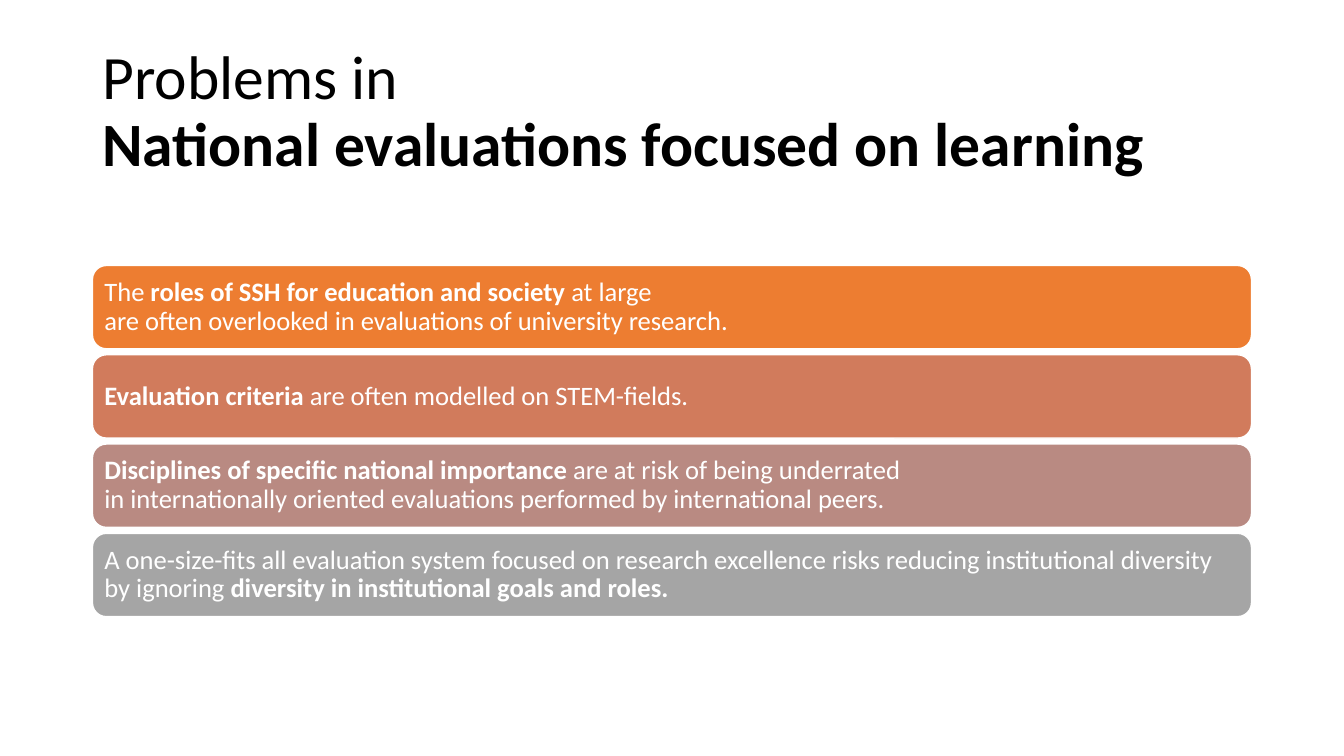
import pptx
import pptx.dml.color
import pptx.enum.shapes
import pptx.enum.text
import pptx.util

Cm = pptx.util.Cm
Pt = pptx.util.Pt

COLORS = {
    "text": "000000",
    "white": "FFFFFF",
    "roles": "ED7D31",
    "criteria": "D17B5C",
    "disciplines": "B98A82",
    "diversity": "A5A5A5",
}

LEFT, WIDTH = 2.33, 29.21
BAR_TOP, BAR_HEIGHT, BAR_PITCH = 6.69, 2.1, 2.25

# Each run is (text, bold); each inner list is one line.
TITLE = [
    [("Problems in ", False)],
    [("National evaluations focused on learning", True)],
]
PROBLEMS = [
    ("roles", [
        [("The ", False), ("roles of SSH for education and society ", True),
         ("at large ", False)],
        [("are often overlooked in evaluations of university research.", False)],
    ]),
    ("criteria", [
        [("Evaluation criteria ", True),
         ("are often modelled on STEM-fields.", False)],
    ]),
    ("disciplines", [
        [("Disciplines of specific national importance ", True),
         ("are at risk of being underrated ", False)],
        [("in internationally oriented evaluations performed by "
          "international peers.", False)],
    ]),
    ("diversity", [
        [("A one-size-fits all evaluation system focused on research excellence "
          "risks reducing institutional diversity ", False)],
        [("by ignoring ", False),
         ("diversity in institutional goals and roles.", True)],
    ]),
]


def rgb(name):
    return pptx.dml.color.RGBColor.from_string(COLORS[name])


def set_attrs(obj, values):
    for name, value in values.items():
        setattr(obj, name, value)


def write_lines(tf, lines, size, color, inset):
    """Fill a text frame with one paragraph of broken lines."""
    set_attrs(tf, {
        "word_wrap": True,
        "vertical_anchor": pptx.enum.text.MSO_ANCHOR.MIDDLE,
        "margin_left": inset, "margin_right": inset,
        "margin_top": inset, "margin_bottom": inset,
    })
    p = tf.paragraphs[0]
    set_attrs(p, {"alignment": pptx.enum.text.PP_ALIGN.LEFT, "line_spacing": 0.9})
    for i, line in enumerate(lines):
        if i:
            p.add_line_break()
        for text, bold in line:
            r = p.add_run()
            r.text = text
            set_attrs(r.font, {"name": "Calibri", "size": Pt(size), "bold": bold})
            r.font.color.rgb = rgb(color)


def add_title(s):
    sp = s.shapes.add_textbox(Cm(LEFT), Cm(1.01), Cm(WIDTH), Cm(3.68))
    write_lines(sp.text_frame, TITLE, 44, "text", Cm(0.25))


def add_bar(s, top, fill, lines):
    sp = s.shapes.add_shape(pptx.enum.shapes.MSO_SHAPE.ROUNDED_RECTANGLE,
                            Cm(LEFT), Cm(top), Cm(WIDTH), Cm(BAR_HEIGHT))
    sp.shadow.inherit = False
    sp.fill.solid()
    sp.fill.fore_color.rgb = rgb(fill)
    sp.line.color.rgb = rgb("white")
    sp.line.width = Pt(1)
    write_lines(sp.text_frame, lines, 19, "white", Cm(0.2))


def main():
    prs = pptx.Presentation()
    set_attrs(prs, {"slide_width": Cm(33.87), "slide_height": Cm(19.05)})
    s = prs.slides.add_slide(prs.slide_layouts[6])
    add_title(s)
    for i, (fill, lines) in enumerate(PROBLEMS):
        add_bar(s, BAR_TOP + i * BAR_PITCH, fill, lines)
    prs.save("out.pptx")


if __name__ == "__main__":
    main()
